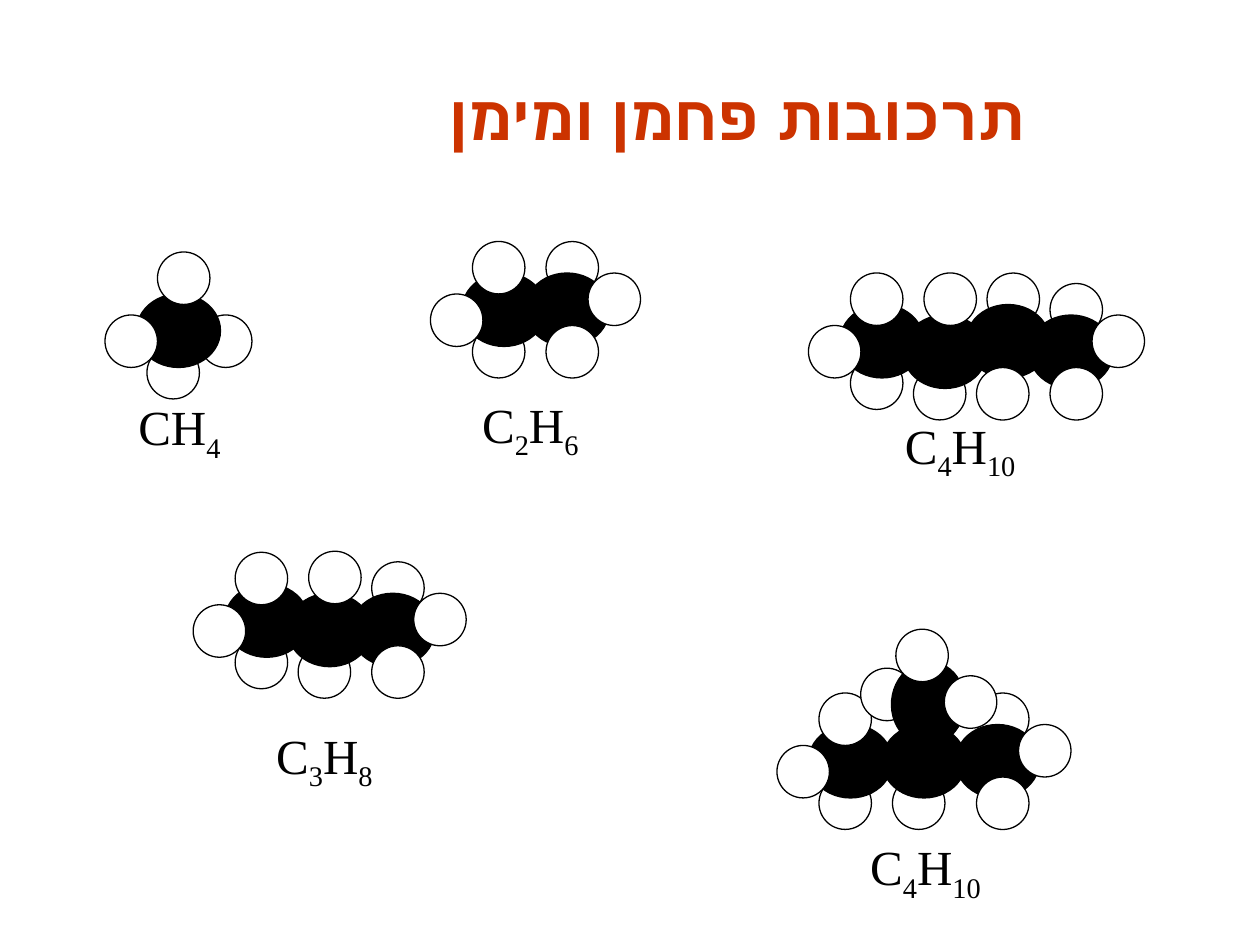
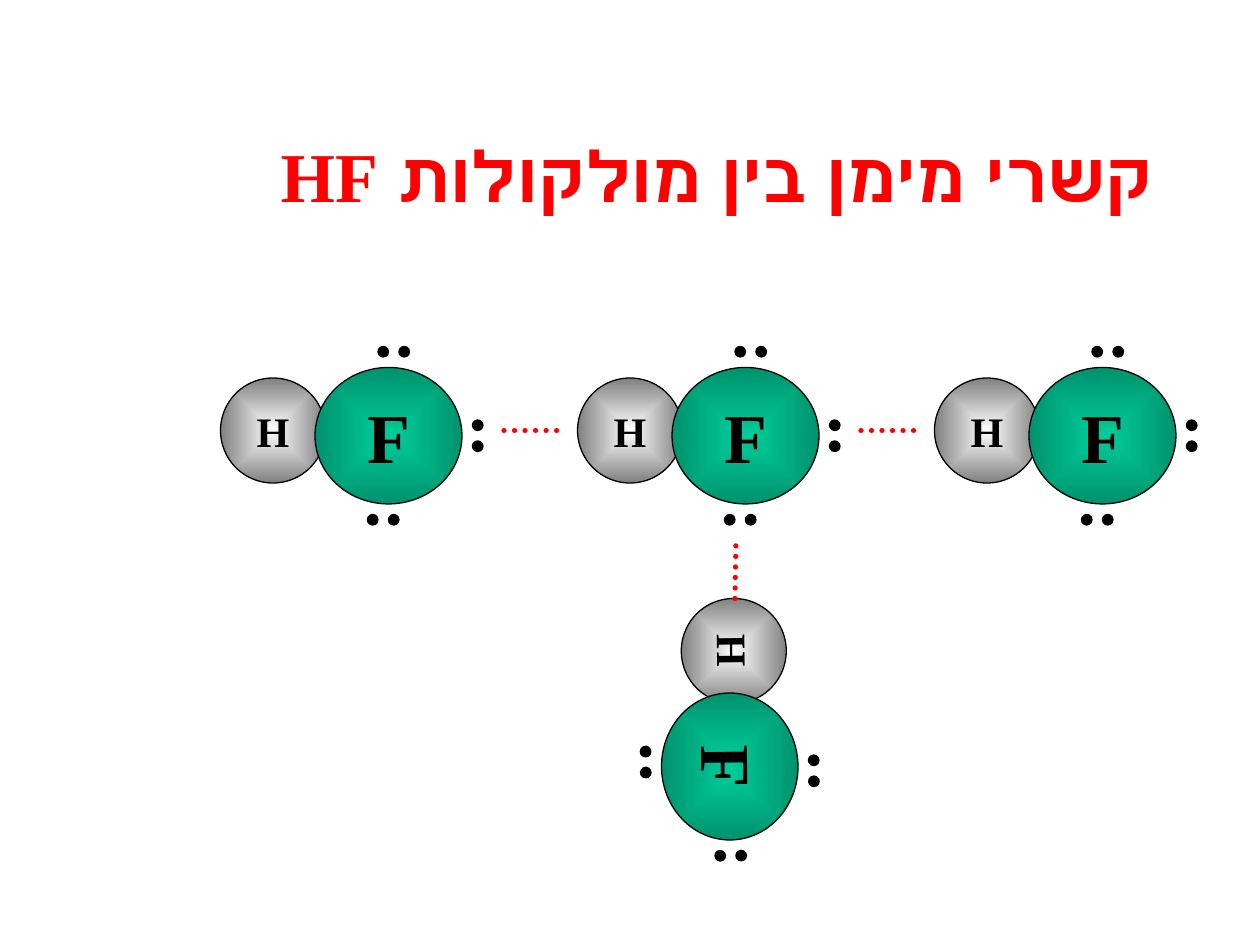
from math import cos, radians, sin

from lxml.etree import SubElement
from pptx import Presentation
from pptx.dml.color import RGBColor
from pptx.enum.dml import MSO_LINE
from pptx.enum.shapes import MSO_CONNECTOR, MSO_SHAPE
from pptx.enum.text import MSO_ANCHOR, PP_ALIGN
from pptx.oxml.ns import qn
from pptx.util import Emu, Pt

PX = 7620  # 120 px to the inch


class Theme:
    serif, sans = "Times New Roman", "Arial"
    black, white = "000000", "FFFFFF"
    rust, red = "CC3300", "FF0000"
    hydrogen = ("FFFFFF", "808080")
    fluorine = ("00CC99", "00926D")
    outline, bond = 0.75, 3
    formula, small_atom, large_atom = 28, 24, 40
    subscript = -25000


# Content: titles as text, box, size, font, colour, alignment
HYDROCARBON_TITLE = ("תרכובות פחמן ומימן", (364, 60, 677, 100), 36,
                     Theme.sans, Theme.rust, PP_ALIGN.CENTER)
HF_TITLE = ("קשרי מימן בין מולקולות HF", (100, 120, 1010, 92), 40,
            Theme.serif, Theme.red, PP_ALIGN.RIGHT)

# Hydrogen centres around a carbon: those behind it, those before it
CARBON_UNITS = {
    "CH4": ([(45, 10), (-5, 40)], [(5, -50), (-45, 10)]),
    "CH3": ([(-5, 40)], [(-5, -40), (-45, 10)]),
    "CH2": ([(-5, 40)], [(5, -50)]),
    "CH": ([(-5, 40)], []),
}

# Molecules: formula, label box, alignment, units as (kind, centre, turn)
MOLECULES = [
    (["CH", "4"], (120, 372, 120, 68), PP_ALIGN.LEFT,
     [("CH4", (170, 315), 0)]),
    (["C", "2", "H", "6"], (430, 370, 150, 68), PP_ALIGN.CENTER,
     [("CH3", (480, 295), 0), ("CH3", (540, 295), 180)]),
    (["C", "3", "H", "8"], (224, 685, 170, 68), PP_ALIGN.CENTER,
     [("CH3", (254, 591), 0), ("CH3", (374, 600), 180),
      ("CH2", (314, 600), 0)]),
    (["C", "4", "H", "10"], (850, 390, 140, 68), PP_ALIGN.LEFT,
     [("CH3", (840, 325), 0), ("CH2", (900, 335), 0),
      ("CH2", (960, 325), 180), ("CH3", (1020, 335), 180)]),
    (["C", "4", "H", "10"], (817, 791, 137, 68), PP_ALIGN.LEFT,
     [("CH3", (950, 725), 180), ("CH", (880, 725), 0),
      ("CH3", (810, 725), 0), ("CH3", (884, 670), 95.2)]),
]
HYDROGEN_SIZE, CARBON_SIZE = (50, 50), (80, 70)

# Hydrogen fluoride, measured from the centre of F
HF_ATOMS = [
    ("H", (-110, -5), (100, 100), Theme.hydrogen, Theme.small_atom),
    ("F", (0, 0), (140, 130), Theme.fluorine, Theme.large_atom),
]
LONE_ELECTRONS = [(-5, -80), (15, -80), (85, -10), (85, 10), (5, 80), (-15, 80)]
ELECTRON_SIZE = (10, 10)
HF_PLACES = [((370 + 340 * i, 415), 0) for i in range(3)] + [((695, 730), 89.4)]
HYDROGEN_BONDS = [((480, 410), (540, 410)), ((820, 410), (880, 410)),
                  ((700, 570), (701, 510))]


def px(*lengths):
    return [Emu(round(length * PX)) for length in lengths]


def color(code):
    return RGBColor.from_string(code)


def add_run(paragraph, text, size, font, code, bold=False, baseline=None):
    run = paragraph.add_run()
    run.text = text
    run.font.size, run.font.name, run.font.bold = Pt(size), font, bold
    run.font.color.rgb = color(code)
    if baseline:
        run._r.get_or_add_rPr().set("baseline", str(baseline))


def set_rtl(paragraph):
    paragraph._p.get_or_add_pPr().set("rtl", "1")


def add_text_box(parent, box, align):
    frame = parent.shapes.add_textbox(*px(*box)).text_frame
    frame.word_wrap = True
    frame.paragraphs[0].alignment = align
    return frame


def add_title(slide, title):
    text, box, size, font, code, align = title
    frame = add_text_box(slide, box, align)
    frame.vertical_anchor = MSO_ANCHOR.MIDDLE
    set_rtl(frame.paragraphs[0])
    add_run(frame.paragraphs[0], text, size, font, code, bold=True)


def fill_glow(ball, inner, outer):
    """Fill from the middle to the rim."""
    ball.fill.gradient()
    for stop, code in zip(ball.fill.gradient_stops, (inner, outer)):
        stop.color.rgb = color(code)
    gradient = ball._element.spPr.find(qn("a:gradFill"))
    gradient.remove(gradient.find(qn("a:lin")))
    glow = SubElement(gradient, qn("a:path"), path="shape")
    SubElement(glow, qn("a:fillToRect"), l="50000", t="50000", r="50000", b="50000")


def add_ball(group, center, offset, turn, size, fill):
    """Draw an ellipse at an offset turned about the centre of its unit."""
    (cx, cy), (dx, dy), (w, h) = center, offset, size
    c, s = cos(radians(turn)), sin(radians(turn))
    x, y = cx + dx * c - dy * s, cy + dx * s + dy * c
    ball = group.shapes.add_shape(MSO_SHAPE.OVAL, *px(x - w / 2, y - h / 2, w, h))
    ball.rotation = turn
    ball.shadow.inherit = False
    ball.line.color.rgb = color(Theme.black)
    ball.line.width = Pt(Theme.outline)
    if isinstance(fill, tuple):
        fill_glow(ball, *fill)
    else:
        ball.fill.solid()
        ball.fill.fore_color.rgb = color(fill)
    return ball


def add_molecule(slide, formula, box, align, units):
    group = slide.shapes.add_group_shape()
    for kind, center, turn in units:
        behind, before = CARBON_UNITS[kind]
        for offset in behind:
            add_ball(group, center, offset, turn, HYDROGEN_SIZE, Theme.white)
        add_ball(group, center, (0, 0), turn, CARBON_SIZE, Theme.black)
        for offset in before:
            add_ball(group, center, offset, turn, HYDROGEN_SIZE, Theme.white)
    label = add_text_box(group, box, align).paragraphs[0]
    for part in formula:
        add_run(label, part, Theme.formula, Theme.serif, Theme.black,
                baseline=Theme.subscript if part.isdigit() else None)


def add_hydrogen_fluoride(slide, center, turn):
    group = slide.shapes.add_group_shape()
    for symbol, offset, size, fill, type_size in HF_ATOMS:
        frame = add_ball(group, center, offset, turn, size, fill).text_frame
        frame.word_wrap = False
        frame.vertical_anchor = MSO_ANCHOR.MIDDLE
        paragraph = frame.paragraphs[0]
        paragraph.alignment = PP_ALIGN.CENTER
        set_rtl(paragraph)
        add_run(paragraph, symbol, type_size, Theme.serif, Theme.black, bold=True)
    for offset in LONE_ELECTRONS:
        add_ball(group, center, offset, turn, ELECTRON_SIZE, Theme.black)


def add_bond(slide, start, end):
    bond = slide.shapes.add_connector(MSO_CONNECTOR.STRAIGHT, *px(*start, *end))
    bond.line.color.rgb = color(Theme.red)
    bond.line.width = Pt(Theme.bond)
    bond.line.dash_style = MSO_LINE.ROUND_DOT
    bond.line._get_or_add_ln().set("cap", "rnd")
    SubElement(bond._element.spPr, qn("a:effectLst"))


def main():
    deck = Presentation()
    deck.slide_width, deck.slide_height = px(1200, 900)
    blank = deck.slide_layouts[6]

    # Carbon and hydrogen compounds
    hydrocarbons = deck.slides.add_slide(blank)
    add_title(hydrocarbons, HYDROCARBON_TITLE)
    for molecule in MOLECULES:
        add_molecule(hydrocarbons, *molecule)

    # Hydrogen bonds between HF molecules
    hydrogen_bonds = deck.slides.add_slide(blank)
    add_title(hydrogen_bonds, HF_TITLE)
    for place in HF_PLACES:
        add_hydrogen_fluoride(hydrogen_bonds, *place)
    for bond in HYDROGEN_BONDS:
        add_bond(hydrogen_bonds, *bond)

    deck.save("out.pptx")


if __name__ == "__main__":
    main()
